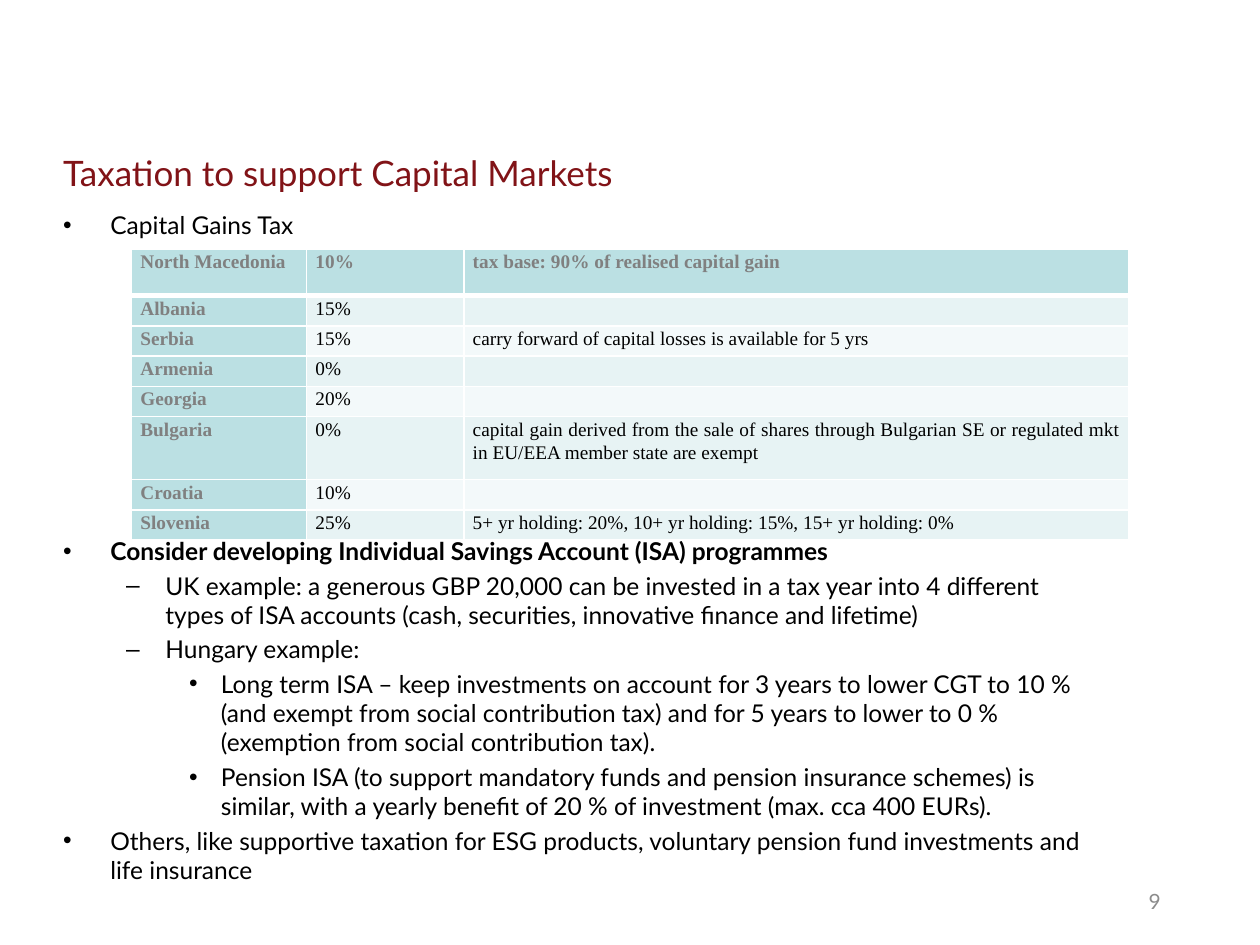
from lxml.etree import SubElement
from pptx import Presentation
from pptx.dml.color import RGBColor
from pptx.enum.text import MSO_ANCHOR, MSO_AUTO_SIZE, PP_ALIGN
from pptx.oxml.ns import qn
from pptx.util import Cm, Pt

COLORS = {
    "title": "811317", "text": "000000", "number": "8C8C8C", "label": "808080",
    "border": "FFFFFF", "head": "BBE0E3", "odd": "E7F3F4", "even": "F3F9FA",
}
BODY_FONT = "Lato"
TABLE_FONT = "Times New Roman"
LEVELS = [("•", 0.95, -0.95), ("–", 2.06, -0.79), ("•", 3.18, -0.64)]
BULLETS = [
    (0, "Capital Gains Tax"),
    (0, "Consider developing Individual Savings Account (ISA) programmes"),
    (1, "UK example: a generous GBP 20,000 can be invested in a tax year into 4 different "
        "types of ISA accounts (cash, securities, innovative finance and lifetime)"),
    (1, "Hungary example:"),
    (2, "Long term ISA – keep investments on account for 3 years to lower CGT to 10 % "
        "(and exempt from social contribution tax) and for 5 years to lower to 0 % "
        "(exemption from social contribution tax)."),
    (2, "Pension ISA (to support mandatory funds and pension insurance schemes) is similar, "
        "with a yearly benefit of 20 % of investment (max. cca 400 EURs)."),
    (0, "Others, like supportive taxation for ESG products, voluntary pension fund "
        "investments and life insurance"),
]
TABLE_GAP_INDEX = 1
TABLE_GAP = Pt(169.5)
TAXES = [
    ("North Macedonia", "10%", "tax base: 90% of realised capital gain"),
    ("Albania", "15%", ""),
    ("Serbia", "15%", "carry forward of capital losses is available for 5 yrs"),
    ("Armenia", "0%", ""),
    ("Georgia", "20%", ""),
    ("Bulgaria", "0%", "capital gain derived from the sale of shares through Bulgarian SE "
                       "or regulated mkt in EU/EEA member state are exempt"),
    ("Croatia", "10%", ""),
    ("Slovenia", "25%", "5+ yr holding: 20%, 10+ yr holding: 15%, 15+ yr holding: 0%"),
]
COLUMN_WIDTHS = [3.53, 3.17, 13.41]
ROW_HEIGHT = 0.61
TALL_ROWS = {0: 0.93, 5: 1.27}


def style_spans(para, font, size, color, bold=False):
    """Format every run of a paragraph."""
    for span in para.runs:
        span.font.name = font
        span.font.size = Pt(size)
        span.font.bold = bold
        span.font.color.rgb = RGBColor.from_string(COLORS[color])


def place(box, left, top, width, height, anchor=MSO_ANCHOR.TOP):
    """Position a text shape and fix its wrapping."""
    box.left, box.top, box.width, box.height = Cm(left), Cm(top), Cm(width), Cm(height)
    frame = box.text_frame
    frame.word_wrap = True
    frame.auto_size = MSO_AUTO_SIZE.NONE
    frame.vertical_anchor = anchor


def add_line(box, text, size, color, align):
    """Write a single aligned line into a text shape."""
    box.text_frame.text = text
    para = box.text_frame.paragraphs[0]
    para.alignment = align
    style_spans(para, BODY_FONT, size, color)


def set_bullet(para, level):
    """Give a paragraph the bullet and indents of its level."""
    mark, margin, indent = LEVELS[level]
    para.level = level
    properties = para._p.get_or_add_pPr()
    properties.set("marL", str(Cm(margin)))
    properties.set("indent", str(Cm(indent)))
    SubElement(properties, qn("a:buFont"), typeface="Arial")
    SubElement(properties, qn("a:buChar"), char=mark)


def fill_body(box):
    """Write the bullet list, leaving room for the table."""
    frame = box.text_frame
    for index, (level, text) in enumerate(BULLETS):
        para = frame.add_paragraph() if index else frame.paragraphs[0]
        para.text = text
        set_bullet(para, level)
        para.space_before = Pt(2.8) if index else Pt(0)
        style_spans(para, BODY_FONT, 14, "text", index == TABLE_GAP_INDEX)
    frame.paragraphs[TABLE_GAP_INDEX].space_before = TABLE_GAP


def set_borders(cell, row):
    """Draw white cell borders, thick under the header row."""
    widths = {"lnL": 1, "lnR": 1, "lnT": 3 if row == 1 else 1, "lnB": 3 if row == 0 else 1}
    properties = cell._tc.get_or_add_tcPr()
    for side, width in widths.items():
        line = SubElement(properties, qn(f"a:{side}"), w=str(Pt(width)))
        fill = SubElement(line, qn("a:solidFill"))
        SubElement(fill, qn("a:srgbClr"), val=COLORS["border"])


def fill_cell(cell, text, row, column):
    """Write and format one table cell."""
    heading = row == 0 or column == 0
    cell.margin_left = cell.margin_right = Cm(0.18)
    cell.margin_top = cell.margin_bottom = Cm(0)
    set_borders(cell, row)
    cell.fill.solid()
    shade = "head" if heading else "odd" if row % 2 else "even"
    cell.fill.fore_color.rgb = RGBColor.from_string(COLORS[shade])
    para = cell.text_frame.paragraphs[0]
    para.text = text
    para.alignment = PP_ALIGN.JUSTIFY
    para.line_spacing = 1.1
    style_spans(para, TABLE_FONT, 11, "label" if heading else "text", heading)
    if not text:
        SubElement(para._p, qn("a:endParaRPr"), sz="1100")


def add_tax_table(slide):
    """Add the capital gains tax table."""
    heights = [TALL_ROWS.get(row, ROW_HEIGHT) for row in range(len(TAXES))]
    table = slide.shapes.add_table(
        len(TAXES), len(COLUMN_WIDTHS), Cm(2.65), Cm(5.03),
        Cm(sum(COLUMN_WIDTHS)), Cm(sum(heights))).table
    for column, width in zip(table.columns, COLUMN_WIDTHS):
        column.width = Cm(width)
    for row, (height, texts) in enumerate(zip(heights, TAXES)):
        table.rows[row].height = Cm(height)
        for column, text in enumerate(texts):
            fill_cell(table.cell(row, column), text, row, column)


def main():
    """Build and save the deck."""
    deck = Presentation()
    deck.slide_width, deck.slide_height = Cm(25.4), Cm(19.05)
    page = deck.slides.add_slide(deck.slide_layouts[1])
    body = page.placeholders[1]
    place(body, 1.02, 4.11, 21.08, 13.0)
    fill_body(body)
    title = page.shapes.title
    place(title, 1.02, 2.92, 19.0, 1.6)
    add_line(title, "Taxation to support Capital Markets", 20, "title", PP_ALIGN.LEFT)
    number = page.shapes.add_textbox(0, 0, 0, 0)
    place(number, 17.93, 17.65, 5.72, 1.02, MSO_ANCHOR.MIDDLE)
    add_line(number, "9", 12, "number", PP_ALIGN.RIGHT)
    add_tax_table(page)
    deck.save("out.pptx")


if __name__ == "__main__":
    main()
